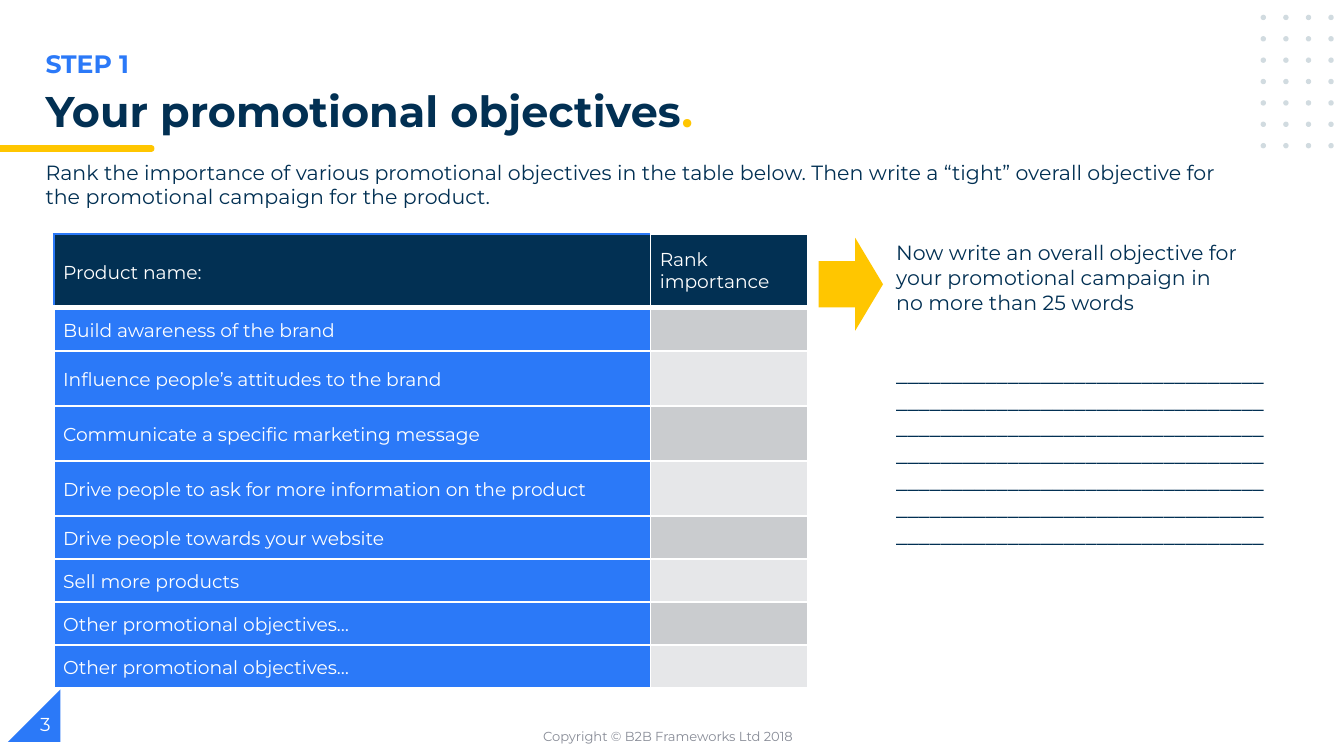
import pptx
import pptx.util
import pptx.dml.color
import pptx.enum.shapes
import pptx.enum.text
import pptx.oxml
import pptx.oxml.ns

HUES = {
    "navy": "023053", "blue": "2B79F8", "gold": "FFC600", "white": "FFFFFF",
    "dot": "D1DBE0", "dark": "CACCCF", "light": "E6E7E9", "grey": "888C97",
}
RGB = {name: pptx.dml.color.RGBColor.from_string(code) for name, code in HUES.items()}
KIND = pptx.enum.shapes.MSO_SHAPE
MID = pptx.enum.text.MSO_ANCHOR.MIDDLE
LEFT = pptx.enum.text.PP_ALIGN.LEFT
MARGIN = {"margin_left": 0.7, "margin_right": 0.7, "margin_top": 0, "margin_bottom": 0}

deck = pptx.Presentation()
deck.slide_width = pptx.util.Inches(10)
deck.slide_height = pptx.util.Inches(5.625)
slide = deck.slides.add_slide(deck.slide_layouts[6])
shapes = slide.shapes
# The grid has 100 square columns across the slide
UNIT = deck.slide_width / 100


def draw(kind, hue, *box):
    shape = shapes.add_shape(kind, *[round(n * UNIT) for n in box])
    shape.shadow.inherit = False
    shape.fill.solid()
    shape.fill.fore_color.rgb = RGB[hue]
    shape.line.fill.background()
    return shape


def write(frame, parts, size, face="Montserrat", bold=False, **form):
    frame.word_wrap = True
    para = frame.paragraphs[0]
    for key, value in {"alignment": LEFT, **form}.items():
        setattr(para, key, value)
    for text, hue in parts:
        run = para.add_run()
        run.text = text
        for key, value in {"name": face, "size": pptx.util.Pt(size), "bold": bold}.items():
            setattr(run.font, key, value)
        run.font.color.rgb = RGB[hue]


# Corner triangle and title underline
corner = draw(KIND.RIGHT_TRIANGLE, "blue", 0.6, 51.3, 3.9, 3.9)
corner._element.spPr.xfrm.set("flipH", "1")
draw(KIND.FLOWCHART_TERMINATOR, "gold", 10.1, 10.8, 1.4, 0.5)
draw(KIND.RECTANGLE, "gold", 0, 10.8, 10.6, 0.5)

# Dot pattern
for row in range(7):
    for col in range(4):
        draw(KIND.OVAL, "dot", 93.8 + col * 1.68, 1.1 + row * 1.59, 0.4, 0.4)

# Objectives table
goals = [
    "Build awareness of the brand",
    "Influence people’s attitudes to the brand",
    "Communicate a specific marketing message",
    "Drive people to ask for more information on the product",
    "Drive people towards your website",
    "Sell more products",
    "Other promotional objectives…",
    "Other promotional objectives…",
]
cols = [44.4, 11.7]
rows = [5.5, 3.2, 4.1, 4.1, 4.1, 3.2, 3.2, 3.2, 3.2]
box = [round(n * UNIT) for n in (4, 17.4, sum(cols), sum(rows))]
table = shapes.add_table(len(rows), len(cols), *box).table
table.first_row = table.horz_banding = False
for col, width in zip(table.columns, cols):
    col.width = round(width * UNIT)
for row, height in zip(table.rows, rows):
    row.height = round(height * UNIT)

cells = [["Product name:", "Rank importance"]] + [[goal, ""] for goal in goals]
for r, line in enumerate(cells):
    for c, text in enumerate(line):
        cell = table.cell(r, c)
        cell.vertical_anchor = MID
        for key, value in MARGIN.items():
            setattr(cell, key, round(value * UNIT))
        for side in "LRTB":
            thick = (r, side) in [(0, "B"), (1, "T")]
            edge = "blue" if (r, c) == (0, 0) and side in "LT" else "white"
            cell._tc.get_or_add_tcPr().append(pptx.oxml.parse_xml(
                f'<a:ln{side} {pptx.oxml.ns.nsdecls("a")} w="{38100 if thick else 12700}">'
                f'<a:solidFill><a:srgbClr val="{HUES[edge]}"/></a:solidFill></a:ln{side}>'))
        body = "blue" if c == 0 else ("dark" if r % 2 else "light")
        cell.fill.solid()
        cell.fill.fore_color.rgb = RGB["navy" if r == 0 else body]
        if text:
            write(cell.text_frame, [(text, "white")], 10, line_spacing=1 if c else 1.15)
        else:
            cell.text_frame.paragraphs[0]._p.get_or_add_endParaRPr().set("sz", "1000")

# Arrow to the writing task
arrow = draw(KIND.RIGHT_ARROW, "gold", 60.9, 17.7, 4.8, 6.9)
arrow.adjustments[1] = 0.43

# Text boxes: place, parts, size, format
center = pptx.enum.text.PP_ALIGN.CENTER
notes = [
    ((2.4, 3.1, 50.2, 3.3), [("STEP 1", "blue")], 13.5, {"bold": True}),
    ((2.4, 6.2, 58.5, 4.2), [("Your promotional objectives", "navy"), (".", "gold")], 23,
     {"bold": True, "line_spacing": 0.9}),
    ((2.4, 11.4, 90.1, 4.7),
     [("Rank the importance of various promotional objectives in the table below. Then write "
       "a “tight” overall objective for the promotional campaign for the product.", "navy")],
     11, {}),
    ((65.7, 17.4, 27.6, 6.6),
     [("Now write an overall objective for your promotional campaign in no more than 25 words",
       "navy")], 11, {}),
    ((65.7, 26.2, 29.9, 15.2), [("_" * 33 * 7, "navy")], 12, {"face": "Calibri"}),
    ((27.2, 52.8, 45, 4), [("Copyright © B2B Frameworks Ltd 2018", "grey")], 7,
     {"alignment": center}),
    ((2, 51.9, 30, 4), [("3", "white")], 10, {}),
]
for place, parts, size, form in notes:
    frame = shapes.add_textbox(*[round(n * UNIT) for n in place]).text_frame
    if place[1] > 50:
        frame.vertical_anchor = MID
    write(frame, parts, size, **form)

deck.save("out.pptx")
